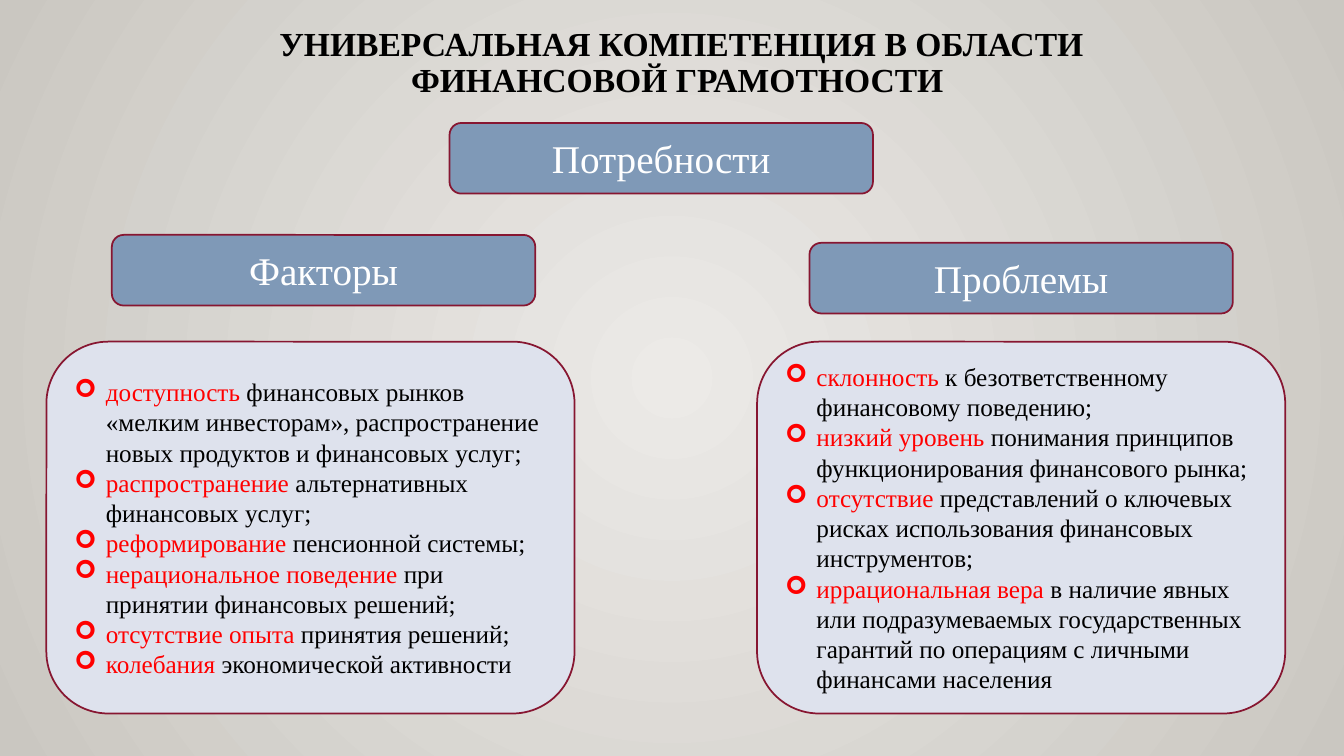
import pptx
import pptx.util
import pptx.dml.color
import pptx.enum.shapes
import pptx.enum.text
import pptx.oxml
import pptx.oxml.ns
from pptx.util import Cm

FONT = "Times New Roman"
HEX = {"black": "000000", "white": "FFFFFF", "red": "FF0000",
       "blue": "7F99B7", "pale": "DEE2ED", "wine": "871631",
       "light": "ECEAE7", "dark": "CAC7C1"}
HEAD = (10.67, 1.78)  # width and height of a heading
BODY = (13.31, 9.37)  # width and height of a list panel

TITLE = "УНИВЕРСАЛЬНАЯ КОМПЕТЕНЦИЯ В ОБЛАСТИ ФИНАНСОВОЙ ГРАМОТНОСТИ "
FACTORS = [
    ("доступность", " финансовых рынков «мелким инвесторам», "
     "распространение новых продуктов и финансовых услуг;"),
    ("распространение", " альтернативных финансовых услуг;"),
    ("реформирование", " пенсионной системы;"),
    ("нерациональное поведение", " при принятии финансовых решений;"),
    ("отсутствие опыта", " принятия решений;"),
    ("колебания", " экономической активности"),
]
ISSUES = [
    ("склонность", " к безответственному финансовому поведению;"),
    ("низкий уровень",
     " понимания принципов функционирования финансового рынка;"),
    ("отсутствие", " представлений о ключевых рисках использования "
     "финансовых инструментов;"),
    ("иррациональная вера", " в наличие явных или подразумеваемых "
     "государственных гарантий по операциям с личными финансами населения"),
]


def color(name):
    return pptx.dml.color.RGBColor.from_string(HEX[name])


def style(font, size, tone, bold=False):
    font.name, font.size, font.bold = FONT, pptx.util.Pt(size), bold
    font.color.rgb = color(tone)


def backdrop(slide):
    """Radial gradient, light in the middle."""
    fill = slide.background.fill
    fill.gradient()
    for stop, tone in zip(fill.gradient_stops, ("light", "dark")):
        stop.color.rgb = color(tone)
    lin = next(slide.element.iter(pptx.oxml.ns.qn("a:lin")))
    ring = pptx.oxml.parse_xml(
        f'<a:path {pptx.oxml.ns.nsdecls("a")} path="circle"><a:fillToRect '
        'l="50000" t="50000" r="50000" b="50000"/></a:path>')
    lin.getparent().replace(lin, ring)


def title(slide, x, y, w, h):
    frame = slide.shapes.add_textbox(Cm(x), Cm(y), Cm(w), Cm(h)).text_frame
    frame.word_wrap = True
    frame.text = TITLE
    para = frame.paragraphs[0]
    para.alignment = pptx.enum.text.PP_ALIGN.CENTER
    para.line_spacing = 0.9
    style(para.runs[0].font, 24, "black", True)


def panel(slide, x, y, size, tone):
    """Rounded box; gives back its text frame."""
    kind = pptx.enum.shapes.MSO_SHAPE.ROUNDED_RECTANGLE
    box = slide.shapes.add_shape(kind, Cm(x), Cm(y), *map(Cm, size))
    box.shadow.inherit = False
    box.fill.solid()
    box.fill.fore_color.rgb = color(tone)
    box.line.color.rgb = color("wine")
    box.line.width = pptx.util.Pt(1.25)
    frame = box.text_frame
    frame.word_wrap = True
    frame.vertical_anchor = pptx.enum.text.MSO_ANCHOR.MIDDLE
    return frame


def heading(slide, x, y, text):
    frame = panel(slide, x, y, HEAD, "blue")
    frame.text = text
    para = frame.paragraphs[0]
    para.alignment = pptx.enum.text.PP_ALIGN.CENTER
    style(para.runs[0].font, 28, "white")


def bullet(para):
    props = para._p.get_or_add_pPr()
    props.set("marL", str(Cm(0.79)))
    props.set("indent", str(-Cm(0.79)))
    for tag in ('buFont typeface="Wingdings"', 'buChar char="➢"'):
        props.append(pptx.oxml.parse_xml(
            f'<a:{tag} {pptx.oxml.ns.nsdecls("a")}/>'))


def column(slide, x, y, dx, dy, name, items):
    """List panel at x, y with its heading shifted by dx, dy."""
    heading(slide, x + dx, y + dy, name)
    frame = panel(slide, x, y, BODY, "pale")
    for i, item in enumerate(items):
        para = frame.add_paragraph() if i else frame.paragraphs[0]
        para.alignment = pptx.enum.text.PP_ALIGN.LEFT
        bullet(para)
        for text, tone in zip(item, ("red", "black")):
            run = para.add_run()
            run.text = text
            style(run.font, 18, tone)


def main():
    deck = pptx.Presentation()
    deck.slide_width, deck.slide_height = Cm(33.87), Cm(19.05)
    slide = deck.slides.add_slide(deck.slide_layouts[6])
    backdrop(slide)
    title(slide, 3.84, 0.56, 26.67, 2.46)
    heading(slide, 11.33, 3.1, "Потребности")
    # Left and right columns
    column(slide, 1.17, 8.61, 1.65, -2.69, "Факторы", FACTORS)
    column(slide, 19.08, 8.61, 1.32, -2.49, "Проблемы", ISSUES)
    deck.save("out.pptx")


if __name__ == "__main__":
    main()
